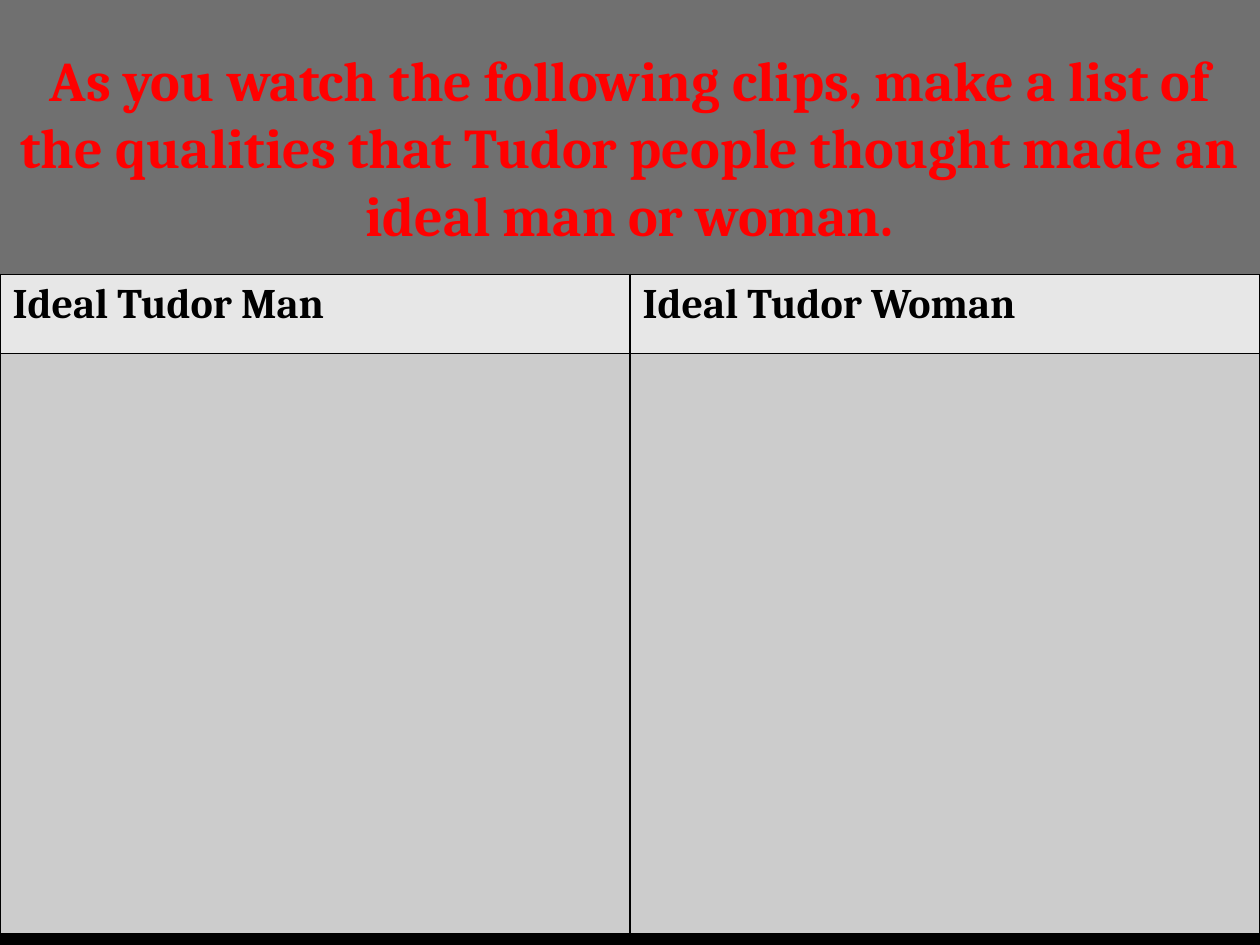
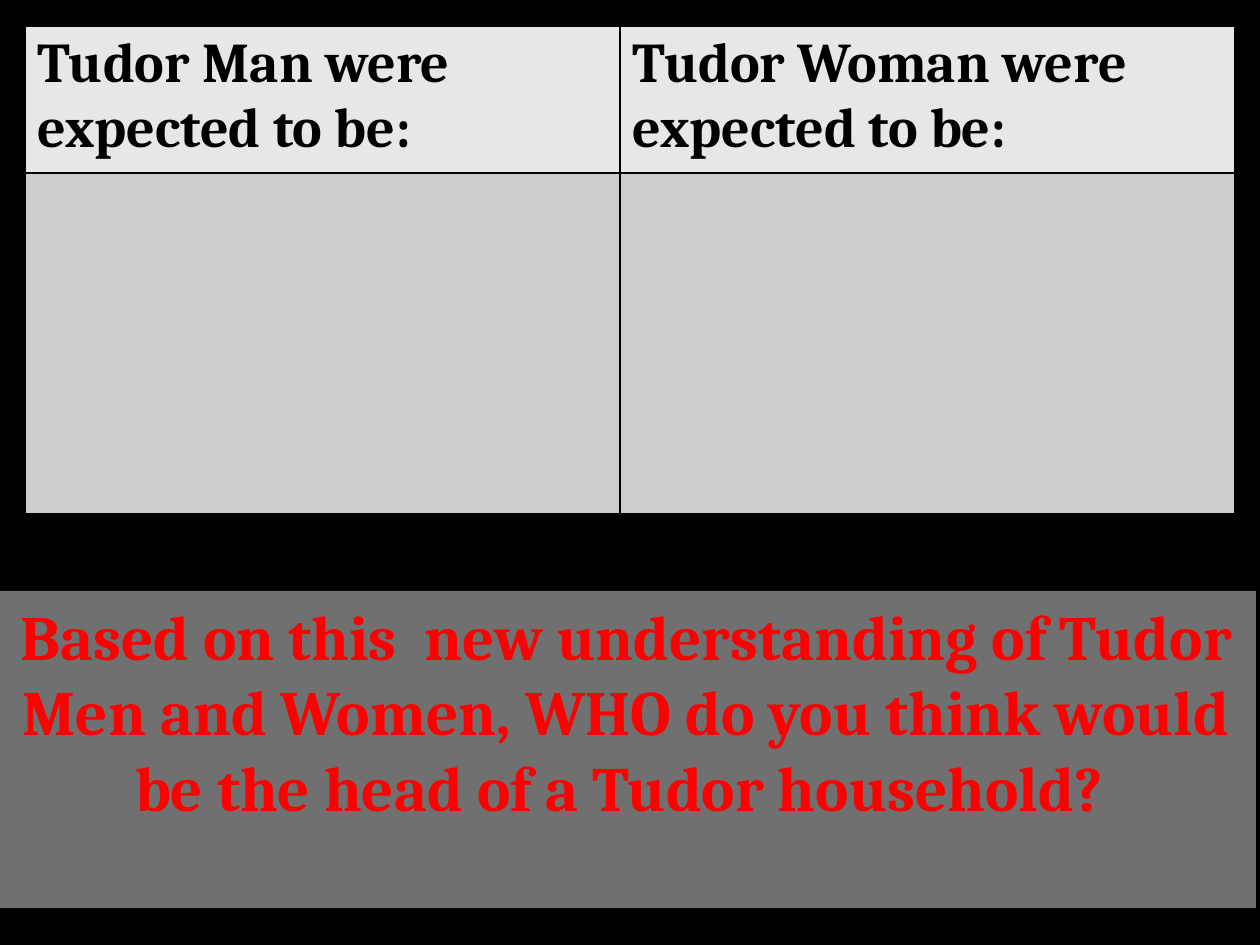
from lxml.etree import SubElement
from pptx import Presentation
from pptx.dml.color import RGBColor
from pptx.enum.text import MSO_ANCHOR, MSO_AUTO_SIZE, PP_ALIGN
from pptx.oxml.ns import qn
from pptx.util import Cm, Pt

COLOURS = {
    "background": "000000",
    "band": "FFFFFF",
    "prompt": "FF0000",
    "header": "E7E7E7",
    "answer": "CCCCCC",
    "ink": "000000",
}
FONT = "Cambria"
BAND_OPACITY = 44
TITLE_ONLY = 5

SLIDES = [
    {
        "prompt": "As you watch the following clips, make a list of the qualities "
                  "that Tudor people thought made an ideal man or woman.",
        "prompt_size": 32,
        "band": (0, -0.08, 25.4, 5.82),
        "top_inset": 1,
        "headings": ["Ideal Tudor Man", "Ideal Tudor Woman"],
        "heading_size": 24,
        "corner": (0, 5.53),
        "columns": [12.7, 12.7],
        "rows": [1.6, 11.69],
    },
    {
        "prompt": "Based on this  new understanding of Tudor Men and Women, "
                  "WHO do you think would be the head of a Tudor household? ",
        "prompt_size": 36,
        "band": (-0.08, 11.91, 25.4, 6.4),
        "top_inset": 0.13,
        "headings": ["Tudor Man were expected to be:", "Tudor Woman were expected to be:"],
        "heading_size": 32,
        "corner": (0.5, 0.53),
        "columns": [12, 12.4],
        "rows": [2.96, 6.86],
    },
]


def paint(fill, role):
    fill.solid()
    fill.fore_color.rgb = RGBColor.from_string(COLOURS[role])


def style(paragraph, size, role):
    font = paragraph.font
    font.name, font.size, font.bold = FONT, Pt(size), True
    font.color.rgb = RGBColor.from_string(COLOURS[role])


def add_prompt(slide, content):
    band = slide.shapes.title
    band.left, band.top, band.width, band.height = map(Cm, content["band"])
    paint(band.fill, "band")
    tint = band.fill._xPr.find(qn("a:solidFill"))[0]
    SubElement(tint, qn("a:alpha"), val=str(BAND_OPACITY * 1000))

    frame = band.text_frame
    frame.text = content["prompt"]
    frame.word_wrap = True
    frame.auto_size = MSO_AUTO_SIZE.NONE
    frame.vertical_anchor = MSO_ANCHOR.TOP
    frame.margin_top = Cm(content["top_inset"])
    paragraph = frame.paragraphs[0]
    paragraph.alignment = PP_ALIGN.CENTER
    style(paragraph, content["prompt_size"], "prompt")


def add_borders(cell):
    properties = cell._tc.get_or_add_tcPr()
    for side in ("lnL", "lnR", "lnT", "lnB"):
        line = SubElement(properties, qn(f"a:{side}"), w=str(Pt(1)))
        solid = SubElement(line, qn("a:solidFill"))
        SubElement(solid, qn("a:srgbClr"), val=COLOURS["ink"])


def add_answer_table(slide, content):
    columns, rows = content["columns"], content["rows"]
    left, top = content["corner"]
    table = slide.shapes.add_table(
        len(rows), len(columns), Cm(left), Cm(top), Cm(sum(columns)), Cm(sum(rows))
    ).table
    for column, width in zip(table.columns, columns):
        column.width = Cm(width)
    for row, height in zip(table.rows, rows):
        row.height = Cm(height)
    for cell in table.iter_cells():
        add_borders(cell)
        paint(cell.fill, "answer")
    for cell, heading in zip(table.rows[0].cells, content["headings"]):
        paint(cell.fill, "header")
        cell.text = heading
        style(cell.text_frame.paragraphs[0], content["heading_size"], "ink")


def main():
    deck = Presentation()
    deck.slide_width, deck.slide_height = Cm(25.4), Cm(19.05)
    for content in SLIDES:
        slide = deck.slides.add_slide(deck.slide_layouts[TITLE_ONLY])
        paint(slide.background.fill, "background")
        add_prompt(slide, content)
        add_answer_table(slide, content)
    deck.save("out.pptx")


if __name__ == "__main__":
    main()
